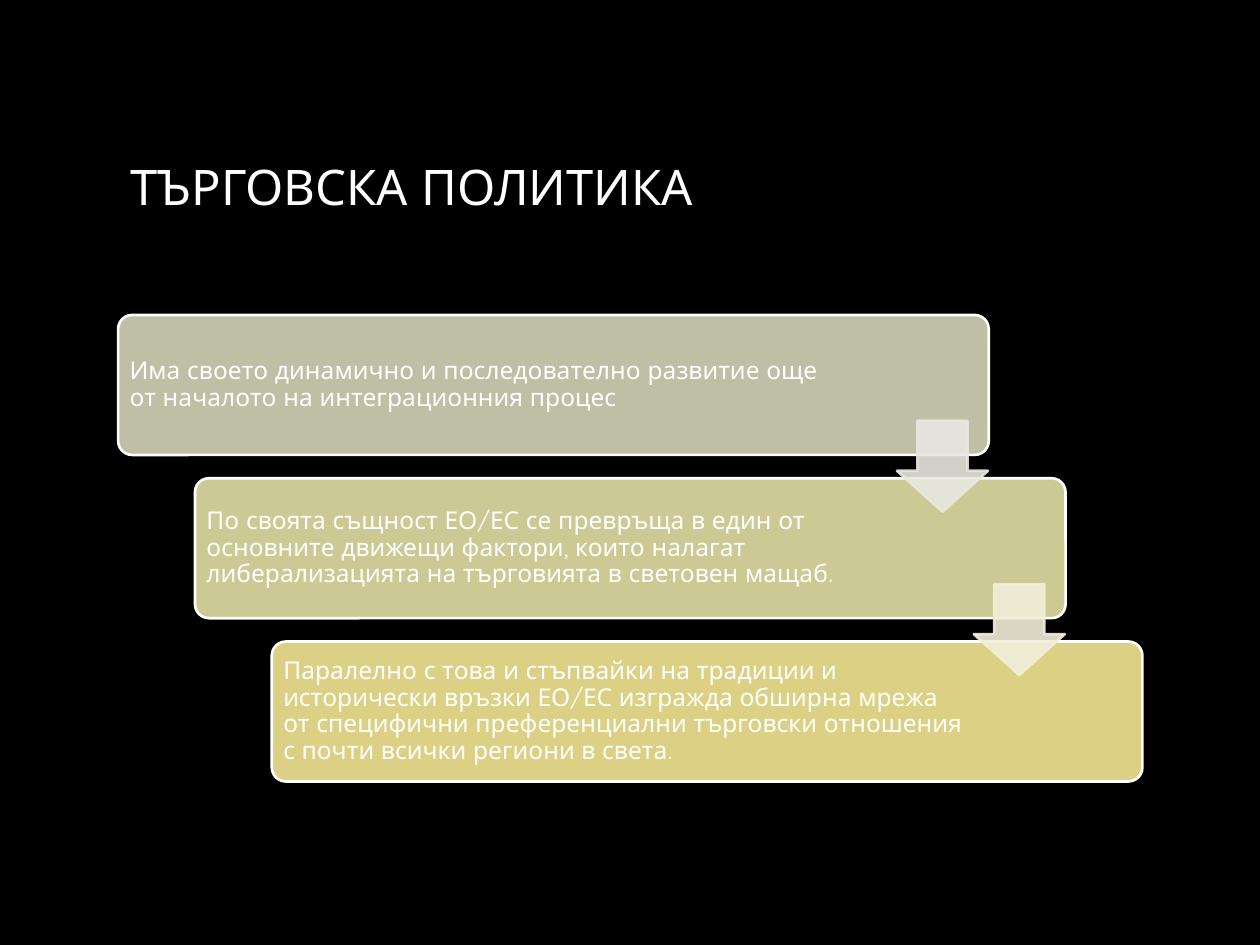
from dataclasses import dataclass

from lxml import etree
from pptx import Presentation
from pptx.dml.color import RGBColor
from pptx.enum import shapes, text
from pptx.oxml import ns
from pptx.util import Pt

COLOURS = {
    "background": "000000",
    "white": "FFFFFF",
    "sage": "BFBFA5",
    "olive": "CDC995",
    "sand": "DCD084",
    "pale sage": "E8E8E1",
    "pale sand": "F2EED9",
}
FONT = "Quicksand"

# Staircase layout, in points
LEFT, TOP = 67.5, 180
STEP_X, STEP_Y = 43.9, 93.3
CARD_WIDTH, CARD_HEIGHT = 497.5, 80
ARROW_LEFT, ARROW_TOP, ARROW_SIZE = 512.6, 240.5, 52
TEXT_INSET, TEXT_MARGIN = 2.35, 4.2


@dataclass
class Card:
    wording: str
    colour: str
    text_width: float


@dataclass
class Box:
    left: float
    top: float
    width: float
    height: float

    def lengths(self) -> list:
        return [Pt(n) for n in (self.left, self.top, self.width, self.height)]


CARDS = [
    Card("Има своето динамично и последователно развитие още от началото на "
         "интеграционния процес", "sage", 411),
    Card("По своята същност ЕО/ЕС се превръща в един от основните движещи фактори, "
         "които налагат либерализацията на търговията в световен мащаб.", "olive", 397),
    Card("Паралелно с това и стъпвайки на традиции и исторически връзки ЕО/ЕС "
         "изгражда обширна мрежа от специфични преференциални търговски отношения "
         "с почти всички региони в света.", "sand", 397),
]
ARROW_COLOURS = ["pale sage", "pale sand"]


def rgb(name: str) -> RGBColor:
    return RGBColor.from_string(COLOURS[name])


def apply_format(target, values: dict) -> None:
    for name, value in values.items():
        setattr(target, name, value)


def add_figure(slide, kind, box: Box, fill: str, line: str, adjustments: list):
    shape = slide.shapes.add_shape(kind, *box.lengths())
    shape.shadow.inherit = False
    for index, value in enumerate(adjustments):
        shape.adjustments[index] = value
    shape.fill.solid()
    shape.fill.fore_color.rgb = rgb(fill)
    shape.line.color.rgb = rgb(line)
    shape.line.width = Pt(1.5)
    return shape


def set_opacity(shape, percent: int) -> None:
    """Make both the fill and the outline translucent."""
    for colour in shape._element.spPr.iter(ns.qn("a:srgbClr")):
        etree.SubElement(colour, ns.qn("a:alpha"), val=str(percent * 1000))


def add_text(slide, box: Box, wording: str, size: float, frame_format: dict,
             spacing: float = 1.0) -> None:
    frame = slide.shapes.add_textbox(*box.lengths()).text_frame
    apply_format(frame, {"word_wrap": True,
                         "vertical_anchor": text.MSO_ANCHOR.MIDDLE, **frame_format})
    paragraph = frame.paragraphs[0]
    paragraph.line_spacing = spacing
    run = paragraph.add_run()
    run.text = wording
    apply_format(run.font, {"name": FONT, "size": Pt(size)})
    run.font.color.rgb = rgb("white")


def add_card(slide, card: Card, index: int) -> None:
    left, top = LEFT + index * STEP_X, TOP + index * STEP_Y
    add_figure(slide, shapes.MSO_SHAPE.ROUNDED_RECTANGLE,
               Box(left, top, CARD_WIDTH, CARD_HEIGHT), card.colour, "white", [0.1])
    margins = {f"margin_{side}": Pt(TEXT_MARGIN)
               for side in ("left", "top", "right", "bottom")}
    text_box = Box(left + TEXT_INSET, top + TEXT_INSET,
                   card.text_width, CARD_HEIGHT - 2 * TEXT_INSET)
    add_text(slide, text_box, card.wording, 14, margins, 0.9)


def add_arrow(slide, colour: str, index: int) -> None:
    box = Box(ARROW_LEFT + index * STEP_X, ARROW_TOP + index * STEP_Y,
              ARROW_SIZE, ARROW_SIZE)
    # The preset lists the head length first in its guides, the shaft width second
    arrow = add_figure(slide, shapes.MSO_SHAPE.DOWN_ARROW, box, colour, colour,
                       [0.55, 0.45])
    set_opacity(arrow, 90)


def main() -> None:
    presentation = Presentation()
    apply_format(presentation, {"slide_width": Pt(720), "slide_height": Pt(540)})
    slide = presentation.slides.add_slide(presentation.slide_layouts[6])
    slide.background.fill.solid()
    slide.background.fill.fore_color.rgb = rgb("background")

    # Title
    add_text(slide, Box(LEFT, 48, 585, 116), "ТЪРГОВСКА ПОЛИТИКА", 28, {})

    # Cards going down the staircase
    for index, card in enumerate(CARDS):
        add_card(slide, card, index)

    # Arrows linking each card to the next
    for index, colour in enumerate(ARROW_COLOURS):
        add_arrow(slide, colour, index)

    presentation.save("out.pptx")


if __name__ == "__main__":
    main()
